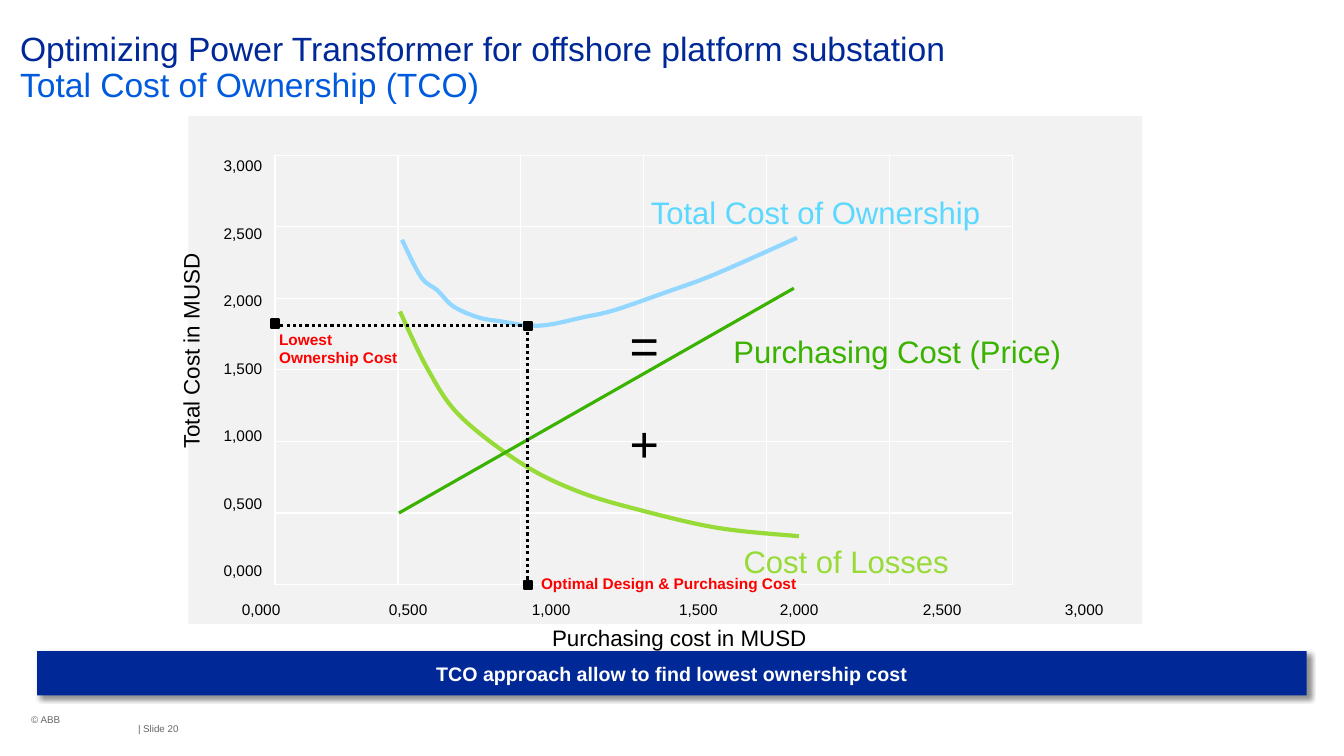
from dataclasses import dataclass

from lxml import etree
from pptx import Presentation
from pptx.dml.color import RGBColor
from pptx.enum.dml import MSO_LINE
from pptx.enum.shapes import MSO_CONNECTOR, MSO_SHAPE
from pptx.enum.text import MSO_ANCHOR, PP_ALIGN
from pptx.oxml import parse_xml
from pptx.oxml.ns import nsdecls, qn
from pptx.util import Pt

PX = 9144  # EMU per px, 100 px to the inch
FONT = "Arial"
NAVY, BLUE, SKY, PALE_SKY = "002897", "005ADE", "5BD8FF", "91D7FF"
GREEN, LIME, RED = "3AB200", "98DB38", "FF0000"
BLACK, WHITE, GRAY, PANEL = "000000", "FFFFFF", "666666", "F2F2F2"
DOTTED = MSO_LINE.ROUND_DOT
RECT = MSO_SHAPE.RECTANGLE
STRAIGHT = MSO_CONNECTOR.STRAIGHT
TOP, MIDDLE = MSO_ANCHOR.TOP, MSO_ANCHOR.MIDDLE
LEFT, CENTER = PP_ALIGN.LEFT, PP_ALIGN.CENTER

Point = tuple[int, int]
Box = tuple[int, int, int, int]


@dataclass
class Label:
    text: str
    box: Box
    size: float
    color: str = BLACK
    bold: bool = False
    rotation: int = 0
    anchor: MSO_ANCHOR = TOP


@dataclass
class Curve:
    points: list[Point]
    color: str
    width: float


def rgb(color: str) -> RGBColor:
    return RGBColor.from_string(color)


def emu(*lengths: int) -> list[int]:
    return [length * PX for length in lengths]


def write(frame, text: str, *, size: float, colors: list[str], bold: bool = False,
          align: PP_ALIGN = LEFT, anchor: MSO_ANCHOR = TOP, gap: float = 0,
          spacing: float = 1.0, tabs: tuple[int, ...] = (),
          insets: Box = (0, 0, 0, 0)) -> None:
    """Newlines part paragraphs, vertical tabs part lines; each line takes the next colour."""
    (frame.margin_left, frame.margin_top,
     frame.margin_right, frame.margin_bottom) = emu(*insets)
    frame.word_wrap = True
    frame.vertical_anchor = anchor
    for row, content in enumerate(text.split("\n")):
        paragraph = frame.add_paragraph() if row else frame.paragraphs[0]
        paragraph.alignment = align
        paragraph.line_spacing = spacing
        if row:
            paragraph.space_before = Pt(gap)
        if tabs:
            stops = etree.SubElement(paragraph._p.get_or_add_pPr(), qn("a:tabLst"))
            for stop in tabs:
                etree.SubElement(stops, qn("a:tab"), pos=str(stop * PX), algn="l")
        for index, line in enumerate(content.split("\v")):
            if index:
                paragraph.add_line_break()
            run = paragraph.add_run()
            run.text = line
            run.font.name, run.font.size, run.font.bold = FONT, Pt(size), bold
            run.font.color.rgb = rgb(colors[index % len(colors)])


def add_text(slide, box: Box, text: str, rotation: int = 0, **style) -> None:
    textbox = slide.shapes.add_textbox(*emu(*box))
    textbox.rotation = rotation
    write(textbox.text_frame, text, **style)


def add_rect(slide, box: Box, color: str):
    rect = slide.shapes.add_shape(RECT, *emu(*box))
    rect.shadow.inherit = False
    rect.fill.solid()
    rect.fill.fore_color.rgb = rgb(color)
    rect.line.fill.background()
    return rect


def add_guide(slide, start: Point, end: Point) -> None:
    guide = slide.shapes.add_connector(STRAIGHT, *emu(*start, *end))
    guide.line.color.rgb = rgb(BLACK)
    guide.line.width = Pt(2.25)
    guide.line.dash_style = DOTTED
    etree.SubElement(guide._element.spPr, qn("a:effectLst"))


def bend(outline) -> None:
    """Turn the straight segments of an outline into a Catmull-Rom spline."""
    knots = [(int(pt.get("x")), int(pt.get("y"))) for pt in outline.iter(qn("a:pt"))]
    padded = [knots[0], *knots, knots[-1]]
    segments = list(outline.iter(qn("a:lnTo")))
    for segment, a, b, c, d in zip(segments, padded, padded[1:], padded[2:], padded[3:]):
        leave = [q + (r - p) // 6 for p, q, r in zip(a, b, c)]
        arrive = [r - (s - q) // 6 for q, r, s in zip(b, c, d)]
        cubic = etree.Element(qn("a:cubicBezTo"))
        for x, y in (leave, arrive, c):
            etree.SubElement(cubic, qn("a:pt"), x=str(x), y=str(y))
        outline.replace(segment, cubic)


def add_curve(slide, curve: Curve) -> None:
    first, *others = [tuple(emu(*point)) for point in curve.points]
    builder = slide.shapes.build_freeform(*first)
    builder.add_line_segments(others, close=False)
    shape = builder.convert_to_shape()
    if len(others) > 1:
        bend(next(shape._element.iter(qn("a:path"))))
    shape.shadow.inherit = False
    shape.fill.background()
    shape.line.color.rgb = rgb(curve.color)
    shape.line.width = Pt(curve.width)


def add_grid(slide, left: int, top: int, count: int, column: int, row: int) -> None:
    box = emu(left, top, count * column, count * row)
    grid = slide.shapes.add_table(count, count, *box).table
    grid.first_row = grid.horz_banding = False
    for cell in grid.iter_cells():
        cell.fill.background()
        for index, side in enumerate("LRTB"):
            cell._tc.get_or_add_tcPr().insert(index, parse_xml(
                f'<a:ln{side} {nsdecls("a")} w="12700"><a:solidFill>'
                f'<a:srgbClr val="{WHITE}"/></a:solidFill></a:ln{side}>'))


def add_banner(slide, box: Box, text: str) -> None:
    banner = add_rect(slide, box, NAVY)
    banner._element.spPr.find(qn("a:effectLst")).append(parse_xml(
        f'<a:outerShdw {nsdecls("a")} blurRad="50800" dist="38100" dir="2700000" algn="tl">'
        f'<a:srgbClr val="{BLACK}"><a:alpha val="43000"/></a:srgbClr></a:outerShdw>'))
    write(banner.text_frame, text, size=14, colors=[WHITE], bold=True,
          align=CENTER, anchor=MIDDLE, insets=(6, 6, 6, 6))


LOSSES = Curve([(397, 309), (425, 367), (457, 413), (518, 460), (575, 488),
                (639, 507), (714, 524), (793, 532)], LIME, 3)
PURCHASE = Curve([(396, 509), (788, 286)], GREEN, 2.25)
TOTAL = Curve([(399, 238), (418, 275), (434, 288), (450, 304), (475, 315), (498, 319),
               (524, 323), (546, 322), (578, 315), (609, 308), (661, 290), (710, 272),
               (791, 236)], PALE_SKY, 3)
OPTIMUM, ON_COST_AXIS, ON_PURCHASE_AXIS = (524, 323), (273, 321), (524, 580)
MARKER = 8
TICKS = ["0,000", "0,500", "1,000", "1,500", "2,000", "2,500", "3,000"]
PURCHASE_TABS = (146, 288, 434, 534, 676, 817)

LABELS = [
    Label("Purchasing Cost (Price)", (728, 330, 340, 29), 22.2, GREEN),
    Label("Cost of Losses", (738, 538, 349, 30), 22.2, LIME),
    Label("Total Cost of Ownership", (646, 192, 412, 30), 22.2, SKY),
    Label("+", (625, 409, 40, 54), 36),
    Label("=", (625, 312, 40, 54), 36),
    Label("Purchasing cost in MUSD", (548, 619, 260, 26), 16),
    Label("Total Cost in MUSD", (83, 326, 212, 26), 16, rotation=270),
    Label("Lowest\nOwnership Cost", (277, 327, 122, 39), 11, RED, True),
    Label("Optimal Design & Purchasing Cost", (537, 570, 262, 23), 11, RED, True),
    Label("© ABB", (31, 708, 162, 10), 7, GRAY),
    Label("| Slide 20", (137, 718, 71, 10), 7, GRAY, anchor=MIDDLE),
]


def main() -> None:
    deck = Presentation()
    deck.slide_width, deck.slide_height = emu(1334, 750)
    slide = deck.slides.add_slide(deck.slide_layouts[6])

    # Title
    add_text(slide, (0, -2, 1334, 127),
             "Optimizing Power Transformer for offshore platform substation\v"
             "Total Cost of Ownership (TCO)",
             size=24, colors=[NAVY, BLUE], spacing=0.9, insets=(20, 34, 24, 0))

    # Plot area and cost curves
    add_rect(slide, (187, 115, 947, 504), PANEL)
    add_grid(slide, 273, 154, count=6, column=122, row=71)
    for curve in (LOSSES, PURCHASE, TOTAL):
        add_curve(slide, curve)

    # Optimum with its guides to both axes
    for foot in ((ON_COST_AXIS[0], OPTIMUM[1]), ON_PURCHASE_AXIS):
        add_guide(slide, OPTIMUM, foot)
    for x, y in (ON_PURCHASE_AXIS, ON_COST_AXIS, OPTIMUM):
        marker = add_rect(slide, (x - MARKER // 2, y - MARKER // 2, MARKER, MARKER), BLACK)
        marker.line.color.rgb = rgb(BLACK)
        marker.line.width = Pt(1.5)

    # Axis scales
    add_text(slide, (240, 595, 890, 55), "\t".join(TICKS), size=11, colors=[BLACK],
             tabs=PURCHASE_TABS)
    add_text(slide, (222, 155, 100, 475), "\n".join(reversed(TICKS)), size=11,
             colors=[BLACK], gap=35)

    # Labels and footer
    for label in LABELS:
        add_text(slide, label.box, label.text, rotation=label.rotation, size=label.size,
                 colors=[label.color], bold=label.bold, anchor=label.anchor)

    # Conclusion
    add_banner(slide, (37, 646, 1260, 44), "TCO approach allow to find lowest ownership cost")
    deck.save("out.pptx")


if __name__ == "__main__":
    main()
